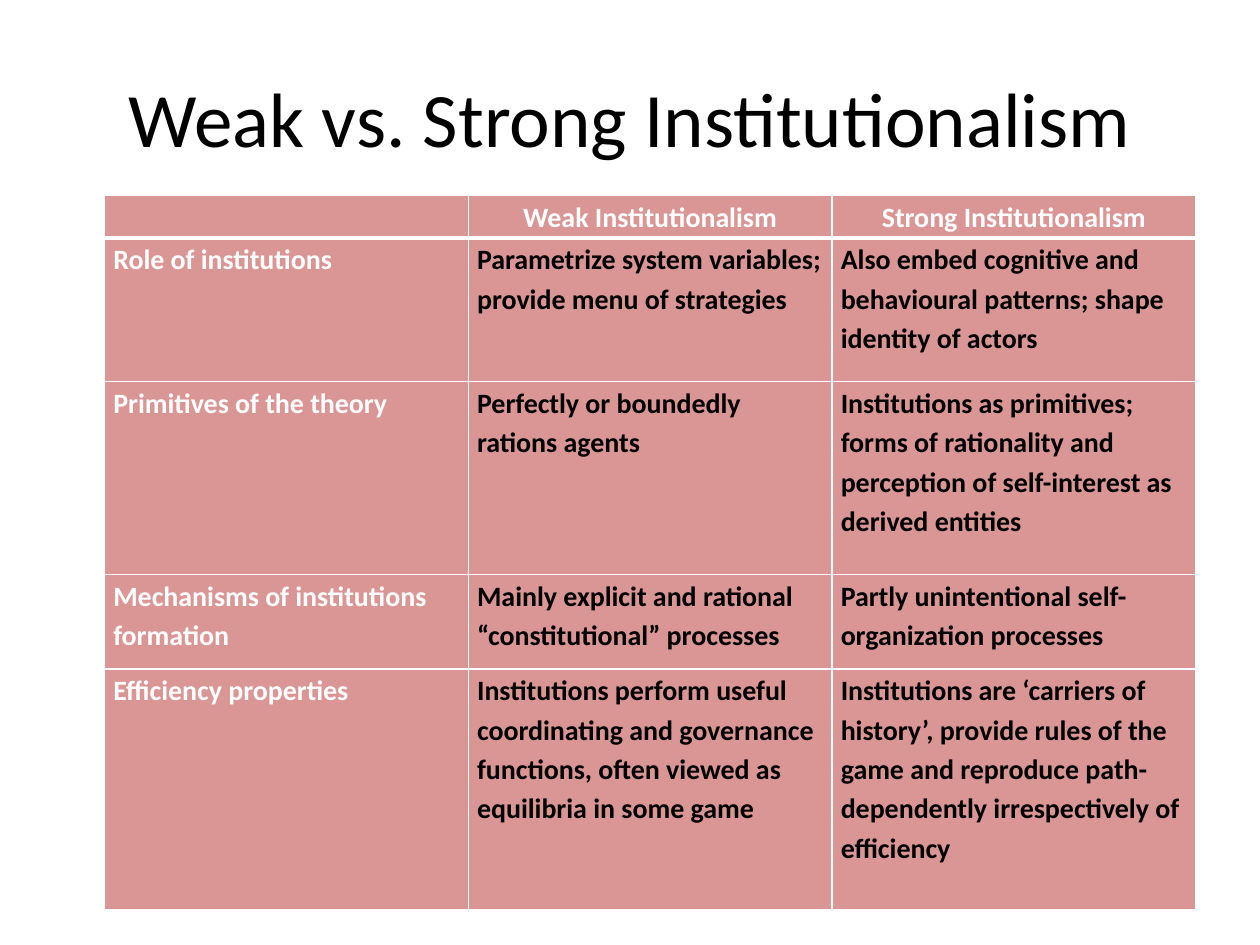
from lxml import etree
from pptx import Presentation
from pptx.dml.color import RGBColor
from pptx.enum.text import MSO_ANCHOR, PP_ALIGN
from pptx.oxml.ns import qn
from pptx.util import Inches, Pt

COLORS = {"rose": "D99694", "white": "FFFFFF", "black": "000000"}
FONT = "Calibri"

ROW_HEIGHTS = [0.34, 1.14, 1.53, 0.75, 1.91]
COMPARISON = [
    ("", "Weak Institutionalism", "Strong Institutionalism"),
    ("Role of institutions",
     "Parametrize system variables; provide menu of strategies",
     "Also embed cognitive and behavioural patterns; shape identity of actors"),
    ("Primitives of the theory",
     "Perfectly or boundedly rations agents",
     "Institutions as primitives; forms of rationality and perception of "
     "self-interest as derived entities"),
    ("Mechanisms of institutions formation",
     "Mainly explicit and rational “constitutional” processes",
     "Partly unintentional self-organization processes"),
    ("Efficiency properties",
     "Institutions perform useful coordinating and governance functions, "
     "often viewed as equilibria in some game",
     "Institutions are ‘carriers of history’, provide rules of the game and "
     "reproduce path-dependently irrespectively of efficiency"),
]


def style_paragraph(paragraph, size, color, align, bold=False):
    paragraph.alignment = align
    font = paragraph.font
    font.name, font.size, font.bold = FONT, Pt(size), bold
    font.color.rgb = RGBColor.from_string(COLORS[color])


def add_borders(cell, widths):
    """Draw white cell borders; widths maps L, R, T, B to points."""
    properties = cell._tc.get_or_add_tcPr()
    for side, width in widths.items():
        line = etree.SubElement(properties, qn(f"a:ln{side}"), w=str(Pt(width)))
        fill = etree.SubElement(line, qn("a:solidFill"))
        etree.SubElement(fill, qn("a:srgbClr"), val=COLORS["white"])


def place_title(slide, left, top, width, height):
    title = slide.shapes.title
    title.left, title.top, title.width, title.height = left, top, width, height
    title.text_frame.text = "Weak vs. Strong Institutionalism"
    title.text_frame.vertical_anchor = MSO_ANCHOR.MIDDLE
    style_paragraph(title.text_frame.paragraphs[0], 44, "black", PP_ALIGN.CENTER)


def fill_cell(cell, text, row, column):
    is_header = row == 0
    cell.margin_left = cell.margin_right = Inches(0.07)
    cell.margin_top = cell.margin_bottom = 0
    cell.text = text
    paragraph = cell.text_frame.paragraphs[0]
    paragraph.line_spacing = 1.15
    style_paragraph(paragraph, 16,
                    "white" if is_header or column == 0 else "black",
                    PP_ALIGN.CENTER if is_header else PP_ALIGN.LEFT, bold=True)
    # A thicker rule separates the header from the body
    add_borders(cell, {"L": 1, "R": 1, "T": 3 if row == 1 else 1,
                       "B": 3 if is_header else 1})
    cell.fill.solid()
    cell.fill.fore_color.rgb = RGBColor.from_string(COLORS["rose"])


def place_comparison(slide, left, top, width, height):
    columns = len(COMPARISON[0])
    table = slide.shapes.add_table(len(COMPARISON), columns,
                                   left, top, width, height).table
    for row, (texts, row_height) in enumerate(zip(COMPARISON, ROW_HEIGHTS)):
        table.rows[row].height = Inches(row_height)
        for column, text in enumerate(texts):
            fill_cell(table.cell(row, column), text, row, column)


def main():
    deck = Presentation()
    deck.slide_width, deck.slide_height = Inches(10), Inches(7.5)
    slide = deck.slides.add_slide(deck.slide_layouts.get_by_name("Title Only"))
    # Heading
    place_title(slide, Inches(0.5), Inches(0.3), Inches(9), Inches(1.25))
    # Comparison of the two views
    place_comparison(slide, Inches(0.83), Inches(1.55),
                     Inches(8.66), Inches(sum(ROW_HEIGHTS)))
    deck.save("out.pptx")


if __name__ == "__main__":
    main()
